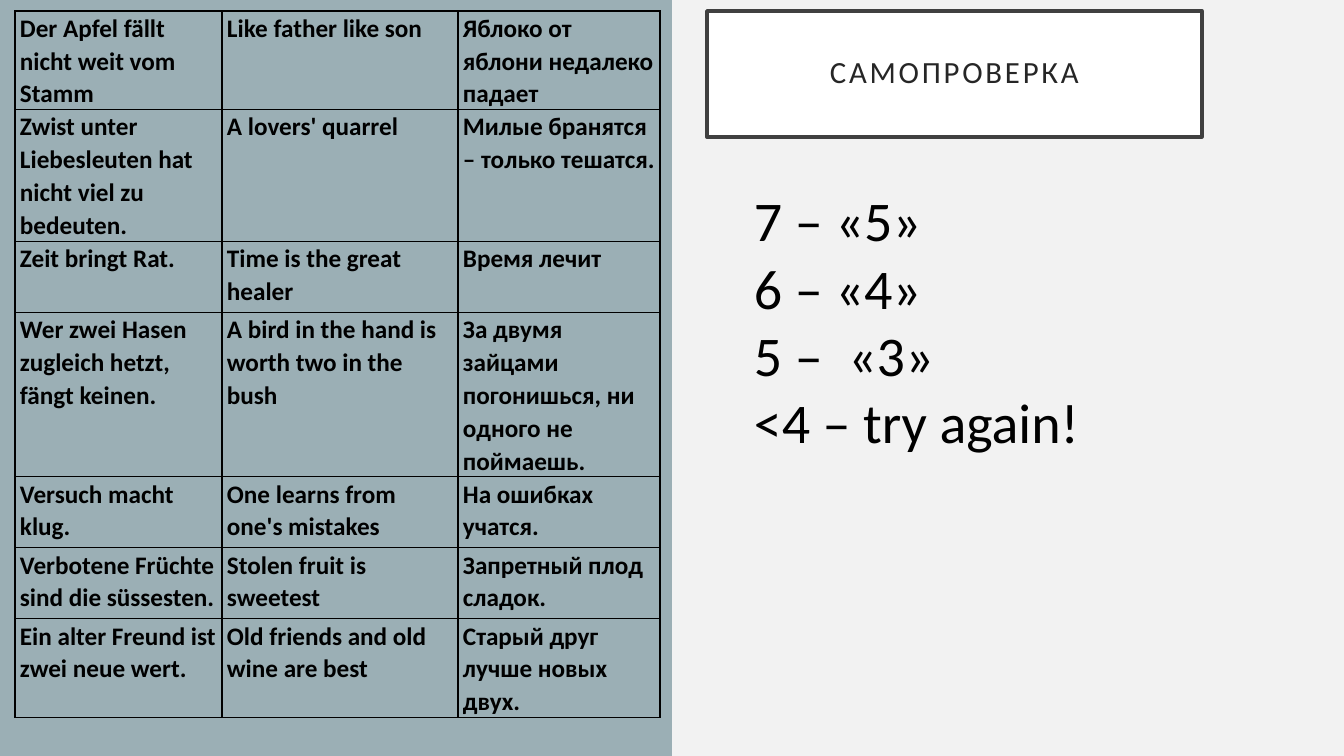
from dataclasses import dataclass

from lxml.etree import SubElement
from pptx import Presentation
from pptx.dml.color import RGBColor
from pptx.enum.shapes import MSO_SHAPE
from pptx.enum.text import MSO_ANCHOR, MSO_AUTO_SIZE, PP_ALIGN
from pptx.oxml.ns import qn
from pptx.util import Emu, Pt

HEADING = "САМОПРОВЕРКА"
PROVERBS = [
    ("Der Apfel fällt nicht weit vom Stamm", "Like father like son",
     "Яблоко от яблони недалеко падает"),
    ("Zwist unter Liebesleuten hat nicht viel zu bedeuten.", "A lovers' quarrel",
     "Милые бранятся – только тешатся."),
    ("Zeit bringt Rat.", "Time is the great healer", "Время лечит"),
    ("Wer zwei Hasen zugleich hetzt, fängt keinen.",
     "A bird in the hand is worth two in the bush",
     "За двумя зайцами погонишься, ни одного не поймаешь."),
    ("Versuch macht klug.", "One learns from one's mistakes", "На ошибках учатся."),
    ("Verbotene Früchte sind die süssesten.", "Stolen fruit is sweetest",
     "Запретный плод сладок."),
    ("Ein alter Freund ist zwei neue wert.", "Old friends and old wine are best",
     "Старый друг лучше новых двух."),
]
GRADES = ["7 – «5»", "6 – «4»", "5 –  «3»", "<4 – try again!"]

SLIDE_SIZE = (1344, 756)
PANEL_BOX = (0, 0, 672, 756)
HEADING_BOX = (707, 11, 495, 126)
GRADES_BOX = (744, 181, 458, 281)
TABLE_ORIGIN = (15, 11)
LANGUAGE_WIDTHS = (207, 236, 202)
ROW_HEIGHT = 71
CELL_INSET = 5
HEADING_INSET = 20


@dataclass(frozen=True)
class Theme:
    font: str = "Calibri"
    background: str = "F2F2F2"
    panel: str = "9BAFB5"
    card: str = "FFFFFF"
    frame: str = "404040"
    heading: str = "262626"
    ink: str = "000000"
    heading_size: int = 22
    proverb_size: int = 18
    grade_size: int = 40


THEME = Theme()


def px(length):
    return Emu(round(length * 914400 / 100.8))


def scaled(box):
    return [px(length) for length in box]


def color(code):
    return RGBColor.from_string(code)


def style(paragraph, size, ink, bold=False, tracking=0):
    for run in paragraph.runs:
        run.font.name = THEME.font
        run.font.size = Pt(size)
        run.font.bold = bold
        run.font.color.rgb = color(ink)
        if tracking:
            run.font._element.set("spc", str(tracking * 100))


def add_rectangle(slide, box, fill):
    rectangle = slide.shapes.add_shape(MSO_SHAPE.RECTANGLE, *scaled(box))
    rectangle.shadow.inherit = False
    rectangle.fill.solid()
    rectangle.fill.fore_color.rgb = color(fill)
    rectangle.line.fill.background()
    return rectangle


def add_heading(slide):
    heading = add_rectangle(slide, HEADING_BOX, THEME.card)
    heading.line.color.rgb = color(THEME.frame)
    heading.line.width = Pt(2.5)
    frame = heading.text_frame
    frame.margin_left = frame.margin_right = px(HEADING_INSET)
    frame.margin_top = frame.margin_bottom = px(HEADING_INSET)
    frame.vertical_anchor = MSO_ANCHOR.MIDDLE
    frame.word_wrap = True
    frame.text = HEADING
    title = frame.paragraphs[0]
    title.alignment = PP_ALIGN.CENTER
    title.line_spacing = 0.9
    style(title, THEME.heading_size, THEME.heading, tracking=2)


def add_borders(cell):
    properties = cell._tc.get_or_add_tcPr()
    for position, side in enumerate(("lnL", "lnR", "lnT", "lnB")):
        border = SubElement(properties, qn(f"a:{side}"), w=str(Pt(1)))
        fill = SubElement(border, qn("a:solidFill"))
        SubElement(fill, qn("a:srgbClr"), val=THEME.ink)
        properties.insert(position, border)


def fill_cell(cell, proverb):
    cell.fill.background()
    cell.margin_left = cell.margin_right = px(CELL_INSET)
    cell.margin_top = cell.margin_bottom = 0
    cell.text_frame.text = proverb
    paragraph = cell.text_frame.paragraphs[0]
    paragraph.line_spacing = 1.07
    style(paragraph, THEME.proverb_size, THEME.ink, bold=True)
    add_borders(cell)


def add_proverbs(slide):
    box = (*TABLE_ORIGIN, sum(LANGUAGE_WIDTHS), ROW_HEIGHT * len(PROVERBS))
    table = slide.shapes.add_table(
        len(PROVERBS), len(LANGUAGE_WIDTHS), *scaled(box)).table
    table.first_row = False
    table.horz_banding = False
    for column, width in zip(table.columns, LANGUAGE_WIDTHS):
        column.width = px(width)
    for row, translations in zip(table.rows, PROVERBS):
        row.height = px(ROW_HEIGHT)
        for cell, proverb in zip(row.cells, translations):
            fill_cell(cell, proverb)


def add_grades(slide):
    frame = slide.shapes.add_textbox(*scaled(GRADES_BOX)).text_frame
    frame.word_wrap = True
    frame.auto_size = MSO_AUTO_SIZE.SHAPE_TO_FIT_TEXT
    frame.text = "\n".join(GRADES)
    for grade in frame.paragraphs:
        style(grade, THEME.grade_size, THEME.ink)


def main():
    deck = Presentation()
    deck.slide_width, deck.slide_height = scaled(SLIDE_SIZE)
    slide = deck.slides.add_slide(deck.slide_layouts[6])
    slide.background.fill.solid()
    slide.background.fill.fore_color.rgb = color(THEME.background)
    add_rectangle(slide, PANEL_BOX, THEME.panel)
    add_heading(slide)
    add_proverbs(slide)
    add_grades(slide)
    deck.save("out.pptx")


if __name__ == "__main__":
    main()
